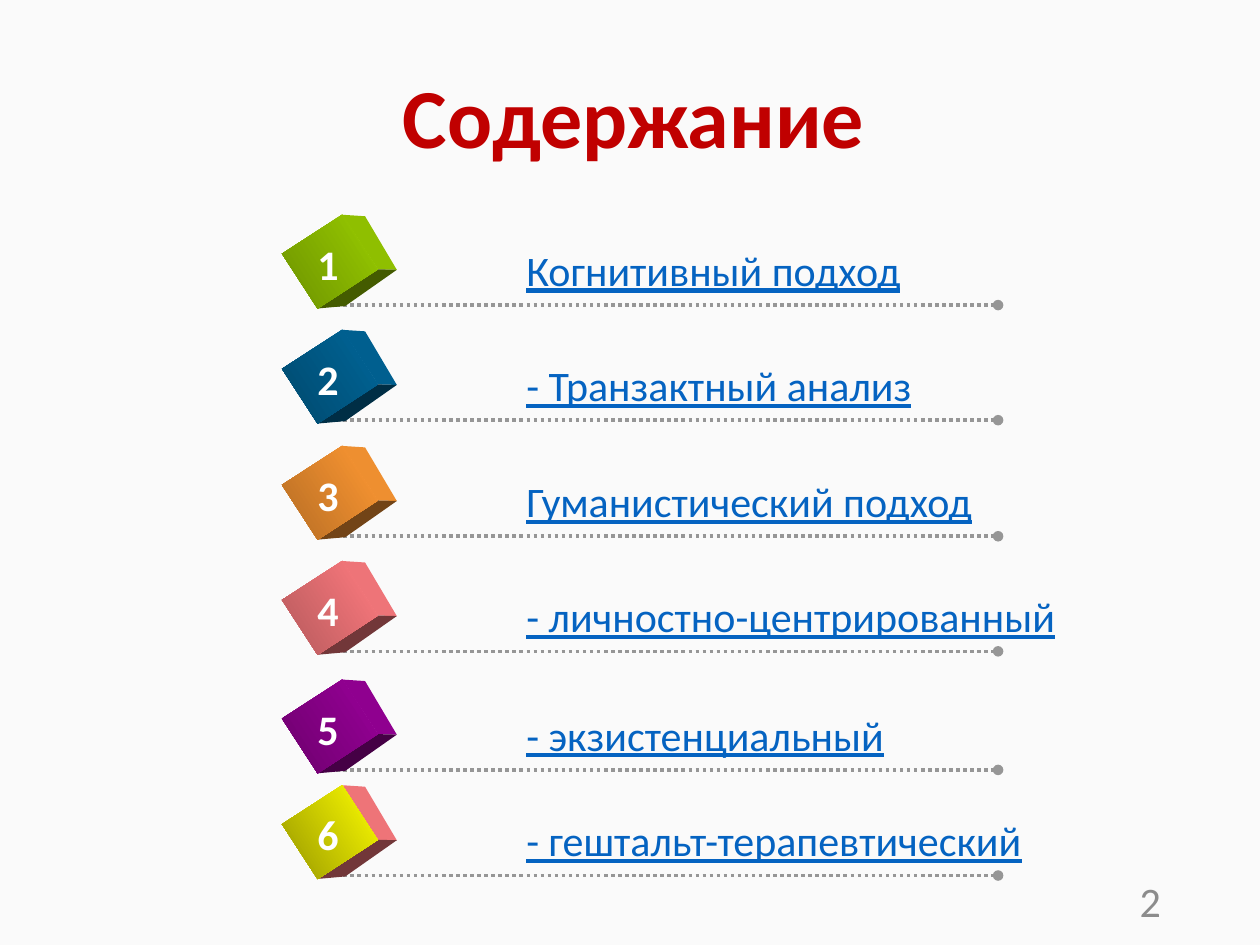
"""Build the contents slide: six numbered cubes with underlined topics."""
from lxml import etree
from pptx import Presentation
from pptx.dml.color import RGBColor
from pptx.enum.dml import MSO_LINE
from pptx.enum.shapes import MSO_CONNECTOR, MSO_SHAPE
from pptx.enum.text import MSO_ANCHOR, MSO_AUTO_SIZE, PP_ALIGN
from pptx.oxml.ns import qn
from pptx.util import Cm, Pt

DOTS = MSO_LINE.ROUND_DOT
STRAIGHT = MSO_CONNECTOR.STRAIGHT
RECT = MSO_SHAPE.RECTANGLE
MIDDLE = MSO_ANCHOR.MIDDLE
FIT = MSO_AUTO_SIZE.SHAPE_TO_FIT_TEXT
LEFT, CENTER, RIGHT = PP_ALIGN.LEFT, PP_ALIGN.CENTER, PP_ALIGN.RIGHT


def paint(target, color):
    target.rgb = RGBColor.from_string(color)


def write(frame, text, size=24, color="FFFFFF", bold=False, line=False, align=LEFT):
    part = frame.paragraphs[0]
    part.alignment = align
    run = part.add_run()
    run.text = text
    font = run.font
    font.name, font.size = "Calibri", Pt(size)
    font.bold, font.underline = bold, line
    paint(font.color, color)


deck = Presentation()
deck.slide_width, deck.slide_height = Cm(25.4), Cm(19.05)
slide = deck.slides.add_slide(deck.slide_layouts[5])
slide.background.fill.solid()
paint(slide.background.fill.fore_color, "FAFAFA")
shapes = slide.shapes

title = shapes.title
title.left, title.top, title.width, title.height = Cm(1.83), Cm(1.35), Cm(21.89), Cm(2.21)
title.text_frame.vertical_anchor = MIDDLE
write(title.text_frame, "Содержание", size=48, color="C00000", bold=True, align=CENTER)
title.text_frame.paragraphs[0].line_spacing = 0.9

rows = [
    (6.15, 8.13, "Когнитивный подход", "99CC00", "6D9200", "8FBF00", "445B00"),
    (8.47, 8.36, "- Транзактный анализ", "006699", "00496D", "005F8F", "002E45"),
    (10.81, 9.58, "Гуманистический подход", "FF9933", "B66D24", "EE8F30", "724417"),
    (13.13, 11.28, "- личностно-центрированный", "FF7C80", "B6595C", "EE7478", "723739"),
    (15.52, 7.8, "- экзистенциальный", "990099", "6D006D", "8F008F", "450045"),
    (17.65, 10.64, "- гештальт-терапевтический", "FFFF00", "979700", "EE7478", "723739"),
]
side = [(6.9, -1.82), (7.36, -1.79), (8, -0.71), (7.62, -0.72)]
base = [(6.4, 0.07), (7.62, -0.72), (8, -0.71), (6.96, 0.02)]

for num, (y, width, topic, light, dark, edge, shade) in enumerate(rows, 1):
    rule = shapes.add_connector(STRAIGHT, Cm(6.78), Cm(y), Cm(20.12), Cm(y))
    rule.line.width = Pt(2)
    paint(rule.line.color, "969696")
    rule.line.dash_style = DOTS
    etree.SubElement(rule.line._get_or_add_ln(), qn("a:tailEnd"), type="oval")
    etree.SubElement(rule._element.spPr, qn("a:effectLst"))

    for points, color in ((side, edge), (base, shade)):
        spots = [(Cm(px), Cm(y + py)) for px, py in points]
        pen = shapes.build_freeform(*spots[0])
        pen.add_line_segments(spots[1:])
        face = pen.convert_to_shape()
        face.shadow.inherit = False
        face.fill.solid()
        paint(face.fill.fore_color, color)
        face.line.fill.background()

    front = shapes.add_shape(RECT, Cm(5.99), Cm(y - 1.6), Cm(1.32), Cm(1.45))
    front.rotation = 57
    front.shadow.inherit = False
    front.line.fill.background()
    front.fill.gradient()
    front.fill.gradient_angle = 270
    for stop, color in zip(front.fill.gradient_stops, (light, dark)):
        paint(stop.color, color)

    label = shapes.add_textbox(Cm(10.36), Cm(y - 1.35), Cm(width), Cm(1.3))
    digit = shapes.add_textbox(Cm(6.15), Cm(y - 1.47), Cm(0.99), Cm(1.27))
    for box in (label, digit):
        box.text_frame.word_wrap = False
        box.text_frame.auto_size = FIT
    write(label.text_frame, topic, color="0563C1", line=True)
    write(digit.text_frame, str(num), bold=True)

page = shapes.add_textbox(Cm(17.93), Cm(17.65), Cm(5.72), Cm(1.02))
page.text_frame.word_wrap = True
page.text_frame.vertical_anchor = MIDDLE
write(page.text_frame, "2", color="8C8C8C", align=RIGHT)

deck.save("out.pptx")
